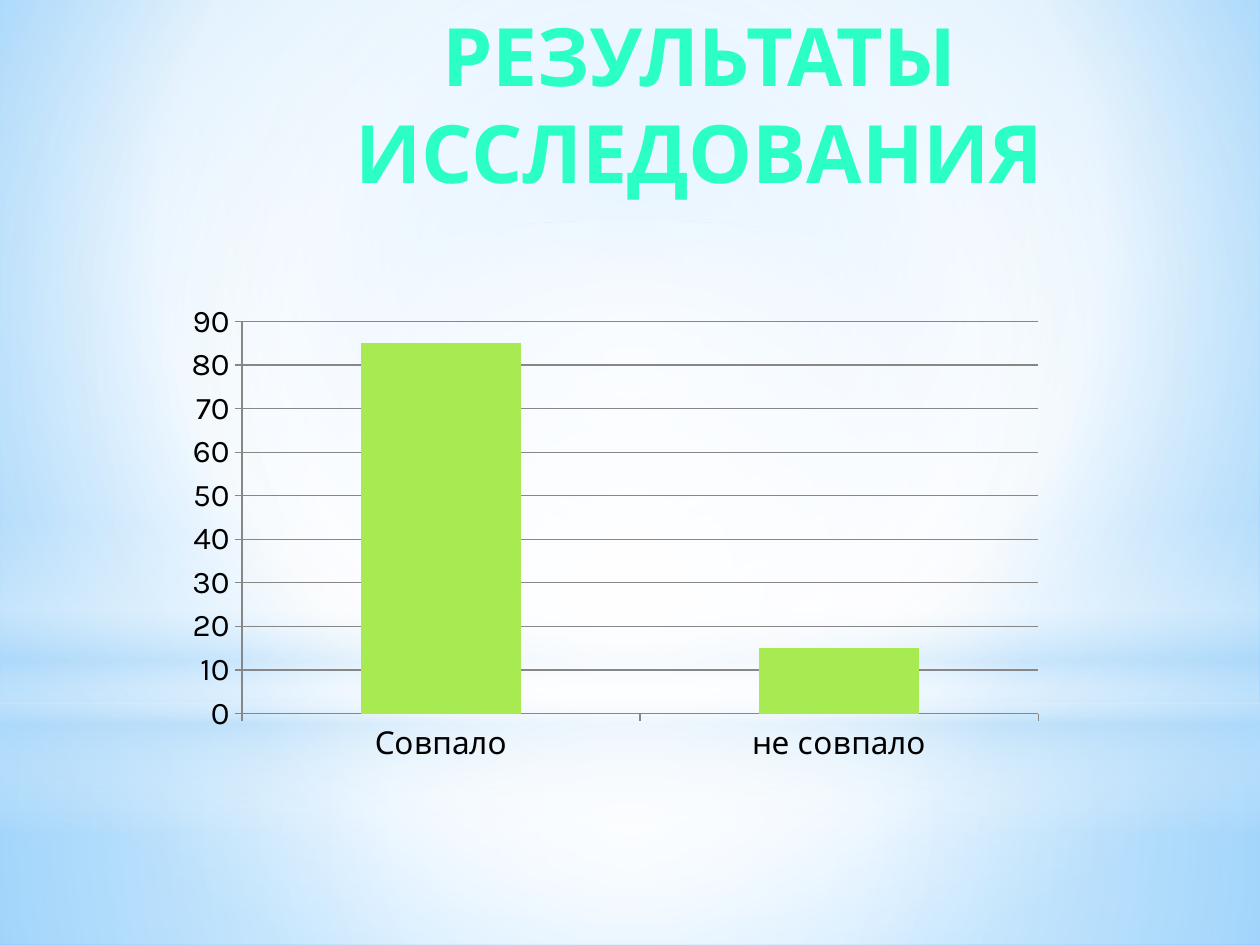
from lxml.etree import SubElement
from pptx import Presentation
from pptx.chart.data import CategoryChartData
from pptx.dml.color import RGBColor
from pptx.enum.chart import XL_CHART_TYPE as CT, XL_TICK_MARK as Tick
from pptx.enum.shapes import MSO_SHAPE as Shape
from pptx.enum.text import MSO_ANCHOR, PP_ALIGN
from pptx.oxml.ns import qn
from pptx.util import Inches, Pt

COLORS = {
    "white": "FFFFFF", "pale": "B4DCFA", "sky": "9ED5FF", "blue": "5BB9FF",
    "title": "2CFFC5", "bar": "A7EA52", "axis": "878787", "text": "000000",
}
RGB = {name: RGBColor.from_string(value) for name, value in COLORS.items()}
FONT = "Karla"
CENTER = (50, 50, 50, 50)


def set_gradient(parent, stops, focus=None):
    """Replace a solid fill by (position, colour, opacity) stops in percent.

    The gradient is circular around focus, or runs downwards without one.
    """
    solid = parent.find(qn("a:solidFill"))
    grad = SubElement(parent, qn("a:gradFill"), rotWithShape="1")
    parent.replace(solid, grad)
    gs_list = SubElement(grad, qn("a:gsLst"))
    for pos, color, opacity in stops:
        gs = SubElement(gs_list, qn("a:gs"), pos=str(pos * 1000))
        clr = SubElement(gs, qn("a:srgbClr"), val=COLORS[color])
        if opacity < 100:
            SubElement(clr, qn("a:alpha"), val=str(opacity * 1000))
    if focus:
        circle = SubElement(grad, qn("a:path"), path="circle")
        sides = {side: str(v * 1000) for side, v in zip("ltrb", focus)}
        SubElement(circle, qn("a:fillToRect"), **sides)
    else:
        SubElement(grad, qn("a:lin"), ang="5400000", scaled="0")


prs = Presentation()
prs.slide_width, prs.slide_height = Inches(10), Inches(7.5)
W, H = prs.slide_width, prs.slide_height
s = prs.slides.add_slide(prs.slide_layouts[5])

# Background and its soft light bands
s.background.fill.solid()
set_gradient(s.element.xpath(".//p:bgPr")[0],
             [(0, "sky", 100), (60, "white", 100), (100, "blue", 100)],
             (20, 10, 20, 60))

bands = [
    (Shape.RECTANGLE, 5.58, 1.92, CENTER,
     [(0, "white", 91), (37, "white", 76), (100, "pale", 79)]),
    (Shape.RECTANGLE, 0, 5.58, CENTER,
     [(0, "white", 89), (48, "white", 62), (100, "pale", 79)]),
    (Shape.RECTANGLE, 4.12, 2.5, None,
     [(0, "white", 0), (29, "white", 30), (45, "pale", 40),
      (55, "white", 26), (65, "pale", 60), (100, "white", 0)]),
    (Shape.OVAL, 1.75, 5.58, CENTER,
     [(0, "white", 100), (56, "white", 0)]),
]
for kind, top, height, focus, stops in bands:
    sp = s.shapes.add_shape(kind, 0, Inches(top), W, Inches(height))
    sp.shadow.inherit = False
    sp.line.fill.background()
    sp.fill.solid()
    set_gradient(sp.element.spPr, stops, focus)

# Title, brought in front of the bands
title = s.shapes.title
title.element.getparent().append(title.element)
title.left, title.top = int(W * 0.2), 0
title.width, title.height = int(W * 0.71), int(H / 6)
tf = title.text_frame
tf.text = "РЕЗУЛЬТАТЫ ИССЛЕДОВАНИЯ"
tf.word_wrap = True
tf.vertical_anchor = MSO_ANCHOR.TOP
p = tf.paragraphs[0]
p.alignment = PP_ALIGN.CENTER
p.font.name, p.font.size, p.font.bold = FONT, Pt(46), True
p.font.color.rgb = RGB["title"]

# Chart of matches
data = CategoryChartData()
data.categories = ["Совпало", "не совпало"]
data.add_series("Series 1", [85, 15])
chart = s.shapes.add_chart(CT.COLUMN_STACKED, Inches(1.38), Inches(2.33),
                           Inches(7), Inches(3.8), data).chart
chart.has_legend = chart.has_title = False
chart.font.name, chart.font.size = FONT, Pt(18)
chart.font.color.rgb = RGB["text"]

plot = chart.plots[0]
plot.gap_width, plot.overlap = 150, 100
plot.vary_by_categories = False
fill = plot.series[0].format.fill
fill.solid()
fill.fore_color.rgb = RGB["bar"]

value_axis = chart.value_axis
value_axis.minimum_scale, value_axis.maximum_scale = 0, 90
value_axis.major_unit = 10
value_axis.has_major_gridlines = True
for axis in (chart.category_axis, value_axis):
    axis.major_tick_mark, axis.minor_tick_mark = Tick.OUTSIDE, Tick.NONE
for part in (chart.category_axis, value_axis, value_axis.major_gridlines):
    part.format.line.color.rgb = RGB["axis"]
    part.format.line.width = Pt(0.75)

prs.save("out.pptx")
